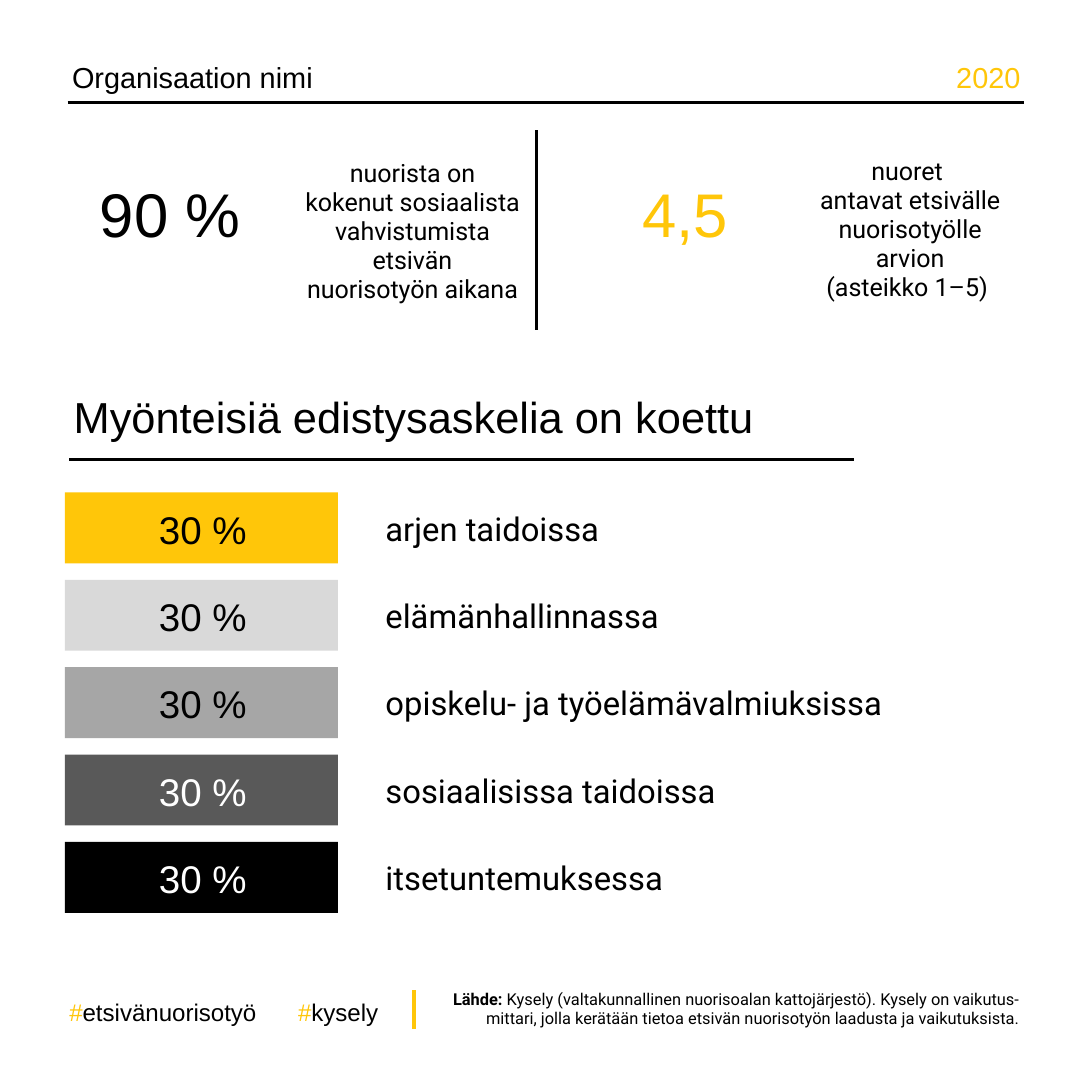
from lxml.etree import SubElement
from pptx import Presentation
from pptx.dml.color import RGBColor as RGB
from pptx.enum.shapes import MSO_CONNECTOR as LINE, MSO_SHAPE as SHAPE
from pptx.enum.text import MSO_ANCHOR as ANCHOR, PP_ALIGN as ALIGN
from pptx.oxml.ns import qn
from pptx.util import Cm, Pt

HUES = {
    "black": "000000",
    "white": "FFFFFF",
    "gold": "FFC609",
    "light": "D9D9D9",
    "mid": "A6A6A6",
    "dark": "595959",
}
SANS, BODY = "Arial", "Roboto"


def color(name):
    return RGB.from_string(HUES[name])


def add_run(para, words, size, font, hue, bold=False):
    run = para.add_run()
    run.text = words
    run.font.size = Pt(size)
    run.font.name = font
    run.font.bold = bold
    run.font.color.rgb = color(hue)


def write(frame, text, size=15, font=SANS, hue="black", lead="", lead_hue="black",
          lead_bold=False, align=ALIGN.LEFT, anchor=ANCHOR.TOP, pads=(0, 0, 0, 0),
          gap=None, wrap=True):
    """Fill a frame; lead is a first run with its own colour and weight."""
    frame.word_wrap = wrap
    frame.vertical_anchor = anchor
    (frame.margin_left, frame.margin_top,
     frame.margin_right, frame.margin_bottom) = map(Cm, pads)
    for i, words in enumerate(text.split("\n")):
        para = frame.add_paragraph() if i else frame.paragraphs[0]
        para.alignment = align
        if gap:
            para.line_spacing = gap
        if lead and not i:
            add_run(para, lead, size, font, lead_hue, lead_bold)
        add_run(para, words, size, font, hue)


def label(slide, box, text, **style):
    write(slide.shapes.add_textbox(*map(Cm, box)).text_frame, text, **style)


def rule(slide, ends, hue="black", width=1.5):
    line = slide.shapes.add_connector(LINE.STRAIGHT, *map(Cm, ends))
    line.line.color.rgb = color(hue)
    line.line.width = Pt(width)
    SubElement(line._element.spPr, qn("a:effectLst"))


def bar(slide, box, text, fill, hue):
    shape = slide.shapes.add_shape(SHAPE.RECTANGLE, *map(Cm, box))
    shape.shadow.inherit = False
    shape.fill.solid()
    shape.fill.fore_color.rgb = color(fill)
    shape.line.fill.background()
    write(shape.text_frame, text, size=20, hue=hue, align=ALIGN.CENTER,
          anchor=ANCHOR.MIDDLE, pads=(0.05, 0.2, 0, 0.2), gap=Pt(24.8))


def header(slide):
    label(slide, (1.27, 0.86, 10.84, 0.79), "Organisaation nimi",
          pads=(0.05, 0, 0.1, 0.3), gap=Pt(24.8))
    label(slide, (16.18, 0.86, 2.51, 0.79), "2020", hue="gold",
          align=ALIGN.RIGHT, pads=(0.05, 0, 0, 0.3), gap=Pt(24.8))
    rule(slide, (1.24, 1.88, 18.75, 1.88))


def figure(slide, left, number, hue, box, text):
    label(slide, (left, 3.48, 3.81, 1.88), number, size=32, hue=hue,
          align=ALIGN.CENTER, pads=(0.05, 0.36, 0, 0.79), gap=Pt(24.8))
    label(slide, box, text, size=13, font=BODY, align=ALIGN.CENTER,
          anchor=ANCHOR.MIDDLE, pads=(0.3, 0.13, 0.3, 0.13), gap=Pt(15))


def steps(slide):
    label(slide, (1.35, 7.01, 17.42, 1.24), "Myönteisiä edistysaskelia on koettu",
          size=22.5, anchor=ANCHOR.MIDDLE, pads=(0, 0.13, 0.3, 0.13))
    rule(slide, (1.27, 8.41, 15.65, 8.41))
    rows = [
        ("30 %", "arjen taidoissa", "gold", "black"),
        ("30 %", "elämänhallinnassa", "light", "black"),
        ("30 %", "opiskelu- ja työelämävalmiuksissa", "mid", "black"),
        ("30 %", "sosiaalisissa taidoissa", "dark", "white"),
        ("30 %", "itsetuntemuksessa", "black", "white"),
    ]
    for i, (share, skill, fill, hue) in enumerate(rows):
        top = 9.02 + 1.6 * i
        bar(slide, (1.19, top, 5, 1.3), share, fill, hue)
        label(slide, (6.76, top + 0.15, 10, 1), skill, size=17, font=BODY,
              anchor=ANCHOR.MIDDLE, pads=(0.3, 0.13, 0.2, 0.13))


def footer(slide):
    for left, width, tag in [(1.27, 4.29, "etsivänuorisotyö"), (5.46, 1.75, "kysely")]:
        label(slide, (left, 18.11, width, 0.81), tag, size=12.5, lead="#",
              lead_hue="gold", pads=(0, 0.13, 0, 0.13), gap=1.07, wrap=False)
    rule(slide, (7.59, 18.14, 7.59, 18.85), hue="gold", width=2)
    label(slide, (7.75, 18.11, 10.92, 1.09),
          "Kysely (valtakunnallinen nuorisoalan kattojärjestö). Kysely on vaikutus-"
          "mittari, jolla kerätään tietoa etsivän nuorisotyön laadusta ja vaikutuksista.",
          size=8.5, font=BODY, lead="Lähde: ", lead_bold=True, align=ALIGN.RIGHT)


def main():
    deck = Presentation()
    deck.slide_width = deck.slide_height = Cm(20)
    slide = deck.slides.add_slide(deck.slide_layouts[6])

    # Name and year
    header(slide)

    # Two key figures with a divider
    figure(slide, 1.19, "90 %", "black", (5.28, 2.51, 4.55, 3.45),
           "nuorista on kokenut sosiaalista vahvistumista etsivän nuorisotyön aikana ")
    figure(slide, 10.62, "4,5", "gold", (14.6, 2.74, 4.14, 2.92),
           "nuoret \nantavat etsivälle nuorisotyölle\narvion\n(asteikko 1–5) ")
    rule(slide, (9.83, 2.39, 9.83, 6.05))

    # Progress bars
    steps(slide)

    # Tags and source
    footer(slide)

    deck.save("out.pptx")


if __name__ == "__main__":
    main()
